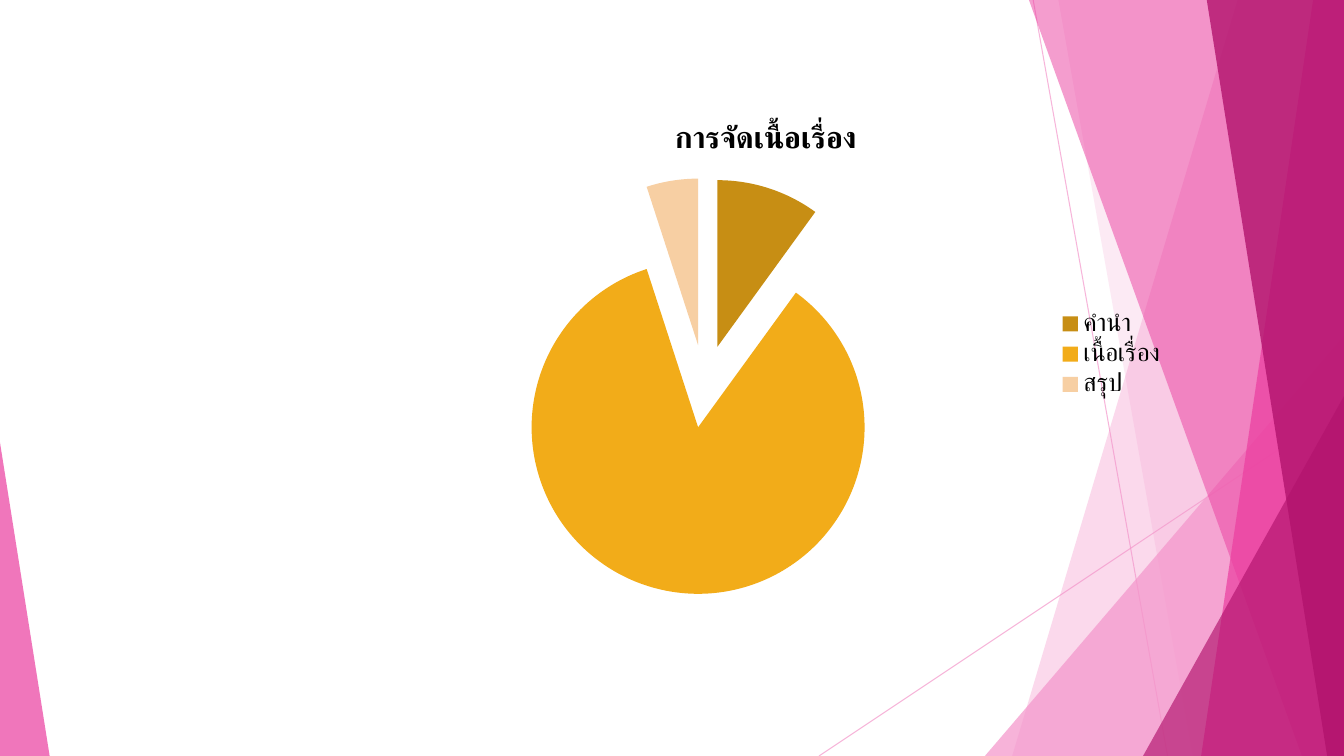
from dataclasses import dataclass

from lxml.etree import SubElement
from pptx import Presentation
from pptx.chart.data import CategoryChartData
from pptx.dml.color import RGBColor
from pptx.enum.chart import XL_CHART_TYPE as ChartType, XL_LEGEND_POSITION as LegendPosition
from pptx.enum.shapes import MSO_CONNECTOR as Connector, MSO_SHAPE as Preset
from pptx.oxml.ns import qn
from pptx.util import Pt


@dataclass(frozen=True)
class Theme:
    light_pink: str = "F496CB"
    pink: str = "EB3D9F"
    magenta: str = "B2136D"
    text: str = "000000"
    slices: tuple = ("C78E14", "F2AC19", "F7CFA3")
    font: str = "Cabin"
    title_size: float = 21.6
    body_size: float = 18
    hairline: float = 0.75


THEME = Theme()
WIDTH, HEIGHT = 960, 540


def set_color(fill, color, opacity=100):
    fill.solid()
    fill.fore_color.rgb = RGBColor.from_string(color)
    if opacity < 100:
        color_element = fill._xPr.find(qn("a:solidFill"))[0]
        SubElement(color_element, qn("a:alpha"), val=str(opacity * 1000))


def format_font(font, size, bold=False, color=THEME.text):
    font.name = THEME.font
    font.size = Pt(size)
    font.bold = bold
    font.color.rgb = RGBColor.from_string(color)


def write_text(text_frame, text, **text_format):
    run = text_frame.paragraphs[0].add_run()
    run.text = text
    format_font(run.font, **text_format)


def finish_shape(shape, color, opacity):
    shape.shadow.inherit = False
    set_color(shape.fill, color, opacity)
    shape.line.fill.background()


def add_ray(slide, start, end):
    connector = slide.shapes.add_connector(
        Connector.STRAIGHT, *(Pt(value) for value in (*start, *end)))
    connector.line.width = Pt(THEME.hairline)
    set_color(connector.line.fill, THEME.light_pink, 70)
    SubElement(connector._element.spPr, qn("a:effectLst"))


def add_band(slide, right, bottom, top_x, bottom_x, color, opacity):
    builder = slide.shapes.build_freeform(top_x, 0, scale=Pt(1))
    builder.add_line_segments([(right, 0), (right, bottom), (bottom_x, bottom)], close=True)
    finish_shape(builder.convert_to_shape(), color, opacity)


def add_corner(slide, left, top, right, bottom, apex, color, opacity):
    triangle = slide.shapes.add_shape(
        Preset.ISOSCELES_TRIANGLE, Pt(left), Pt(top), Pt(right - left), Pt(bottom - top))
    triangle.adjustments[0] = apex
    finish_shape(triangle, color, opacity)


def add_facets(slide, left, top, width, height):
    right, bottom = left + width, top + height
    add_ray(slide, (right - 222, top), (right - 126, bottom))
    add_ray(slide, (right, top + 290), (right - 375, bottom))
    add_band(slide, right, bottom, right - 76, right - 237, THEME.light_pink, 36)
    add_band(slide, right, bottom, right - 204, right - 108, THEME.light_pink, 20)
    add_corner(slide, right - 256.5, top + 240, right, bottom, 1, THEME.light_pink, 72)
    add_band(slide, right, bottom, right - 225, right - 30, THEME.pink, 50)
    add_band(slide, right, bottom, right - 22, right - 102, THEME.pink, 70)
    add_band(slide, right, bottom, right - 98.5, right - 11.5, THEME.magenta, 80)
    add_corner(slide, right - 143.5, top + 283, right, bottom, 1, THEME.magenta, 66)
    add_corner(slide, left, top + 316, left + 35.5, bottom, 0, THEME.pink, 70)


def add_structure_chart(slide, left, top, width, height):
    data = CategoryChartData()
    data.categories = ["คำนำ", "เนื้อเรื่อง", "สรุป"]
    data.add_series("Series 1", [10, 85, 5])
    chart = slide.shapes.add_chart(
        ChartType.PIE_EXPLODED, Pt(left), Pt(top), Pt(width), Pt(height), data).chart
    format_font(chart.font, THEME.body_size)
    chart.has_title = True
    write_text(chart.chart_title.text_frame, "การจัดเนื้อเรื่อง",
               size=THEME.title_size, bold=True)
    chart.has_legend = True
    chart.legend.position = LegendPosition.RIGHT
    chart.legend.include_in_layout = False
    format_font(chart.legend.font, THEME.body_size)
    plot = chart.plots[0]
    plot.vary_by_categories = True
    series = plot.series[0]
    series._element.find(qn("c:explosion")).set("val", "25")
    for index, color in enumerate(THEME.slices):
        point = series.points[index]
        set_color(point.format.fill, color)
        point.format.line.fill.background()


def main():
    presentation = Presentation()
    presentation.slide_width = Pt(WIDTH)
    presentation.slide_height = Pt(HEIGHT)
    slide = presentation.slides.add_slide(presentation.slide_layouts[6])
    add_facets(slide, 0, 0, WIDTH, HEIGHT)
    add_structure_chart(slide, 253.5, 71.5, 587, 363)
    presentation.save("out.pptx")


if __name__ == "__main__":
    main()
